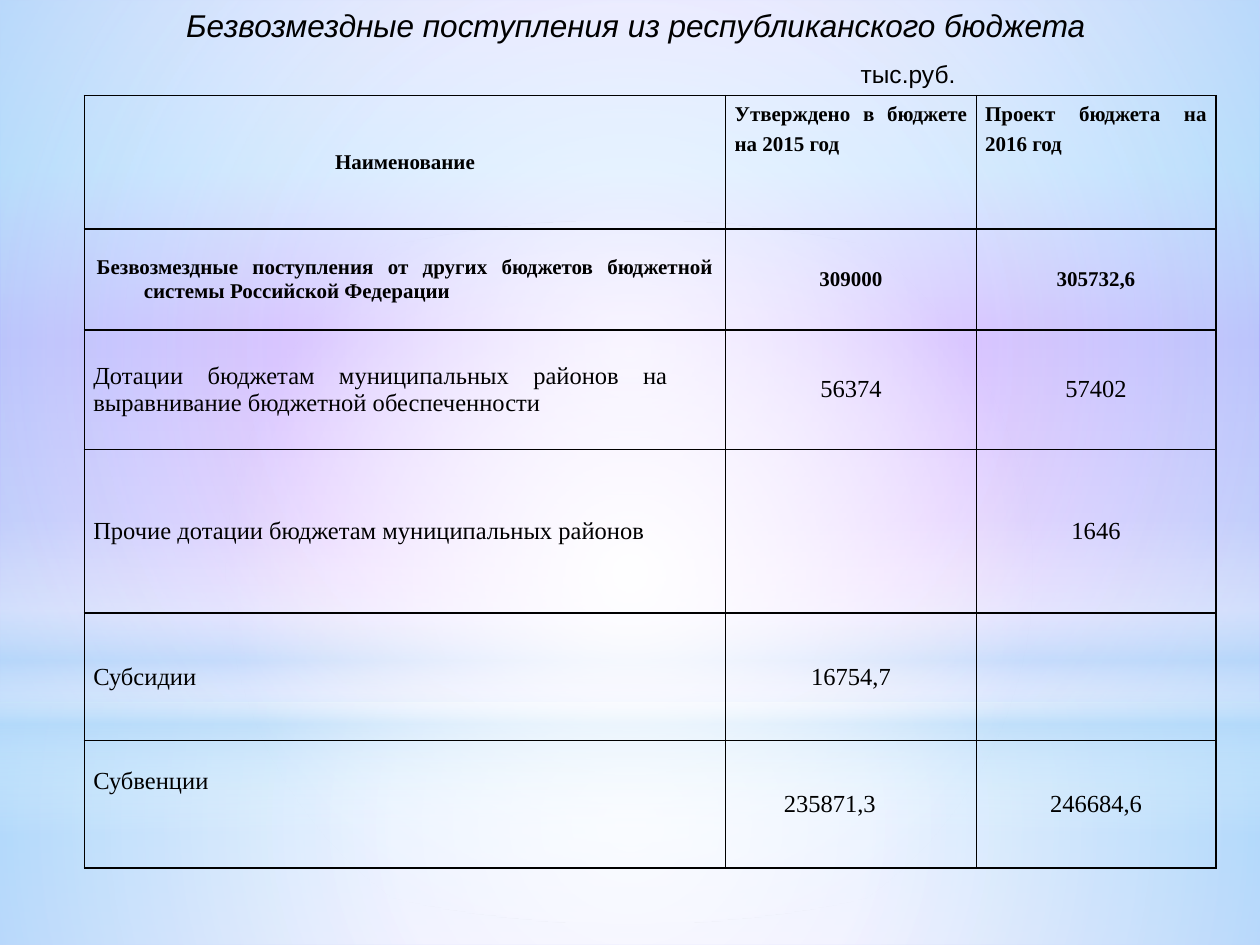
import pptx
import pptx.util
import pptx.dml.color
import pptx.enum.shapes
import pptx.enum.text
import pptx.oxml
import pptx.oxml.ns
from lxml import etree

Cm, Pt = pptx.util.Cm, pptx.util.Pt
RGBColor = pptx.dml.color.RGBColor
ALIGN = pptx.enum.text.PP_ALIGN
ANCHOR = pptx.enum.text.MSO_ANCHOR
SHAPE = pptx.enum.shapes.MSO_SHAPE
qn = pptx.oxml.ns.qn

BLACK = RGBColor(0x00, 0x00, 0x00)
WHITE = RGBColor(0xFF, 0xFF, 0xFF)
PALE_BLUE = RGBColor(0xB4, 0xDC, 0xFA)
LAVENDER = RGBColor(0xCC, 0xCC, 0xFF)
SKY = RGBColor(0x99, 0xCC, 0xFF)
VIOLET = RGBColor(0x99, 0x66, 0xFF)
LILAC = RGBColor(0xCC, 0x99, 0xFF)


def set_gradient(properties, stops, radial):
    """Replace the solid fill with stops of (position %, colour, opacity %)."""
    gradient = etree.Element(qn("a:gradFill"), rotWithShape="1")
    stop_list = etree.SubElement(gradient, qn("a:gsLst"))
    for position, color, opacity in stops:
        stop = etree.SubElement(stop_list, qn("a:gs"), pos=str(position * 1000))
        rgb = etree.SubElement(stop, qn("a:srgbClr"), val=str(color))
        if opacity < 100:
            etree.SubElement(rgb, qn("a:alpha"), val=str(opacity * 1000))
    if radial:
        center = etree.SubElement(gradient, qn("a:path"), path="circle")
        etree.SubElement(center, qn("a:fillToRect"), l="50000", t="50000", r="50000", b="50000")
    else:
        etree.SubElement(gradient, qn("a:lin"), ang="5400000", scaled="0")
    properties.replace(properties.find(qn("a:solidFill")), gradient)


def set_borders(cell):
    """Draw a 1 pt black line on every side of the cell."""
    properties = cell._tc.get_or_add_tcPr()
    for index, side in enumerate(("a:lnL", "a:lnR", "a:lnT", "a:lnB")):
        line = etree.Element(qn(side), w=str(Pt(1)))
        fill = etree.SubElement(line, qn("a:solidFill"))
        etree.SubElement(fill, qn("a:srgbClr"), val=str(BLACK))
        properties.insert(index, line)


presentation = pptx.Presentation()
presentation.slide_width = Cm(25.4)
presentation.slide_height = Cm(19.05)
slide = presentation.slides.add_slide(presentation.slide_layouts[5])

# Background
slide.background.fill.solid()
set_gradient(
    slide.background._cSld.bg.bgPr,
    [(0, LAVENDER, 100), (18, SKY, 100), (36, VIOLET, 100),
     (61, LILAC, 100), (82, SKY, 100), (100, LAVENDER, 100)],
    radial=False,
)

# Translucent glows: shape, top, height, stops, radial
glows = [
    (SHAPE.RECTANGLE, 14.17, 4.88,
     [(0, WHITE, 91), (37, WHITE, 76), (100, PALE_BLUE, 79)], True),
    (SHAPE.RECTANGLE, 0, 14.17,
     [(0, WHITE, 89), (48, WHITE, 62), (100, PALE_BLUE, 79)], True),
    (SHAPE.RECTANGLE, 10.46, 6.35,
     [(0, WHITE, 0), (29, WHITE, 30), (45, PALE_BLUE, 40),
      (55, WHITE, 26), (65, PALE_BLUE, 60), (100, WHITE, 0)], False),
    (SHAPE.OVAL, 4.45, 14.17, [(0, WHITE, 100), (56, WHITE, 0)], True),
]
for kind, top, height, stops, radial in glows:
    glow = slide.shapes.add_shape(kind, 0, Cm(top), presentation.slide_width, Cm(height))
    glow.shadow.inherit = False
    glow.line.fill.background()
    glow.fill.solid()
    set_gradient(glow._element.spPr, stops, radial)

# Budget table
rows = [
    ("Наименование", "Утверждено в бюджете на 2015 год", "Проект бюджета на 2016 год"),
    ("Безвозмездные поступления от других бюджетов бюджетной системы Российской Федерации",
     "309000", "305732,6"),
    ("Дотации бюджетам муниципальных районов на выравнивание бюджетной обеспеченности",
     "56374", "57402"),
    ("Прочие дотации бюджетам муниципальных районов", "", "1646"),
    ("Субсидии", "16754,7", ""),
    ("Субвенции", "235871,3", "246684,6"),
]
column_widths = [12.93, 5.05, 4.83]
row_heights = [2.69, 2.03, 2.41, 3.3, 2.57, 2.57]
budget = slide.shapes.add_table(
    len(rows), len(column_widths), Cm(1.7), Cm(1.93),
    Cm(sum(column_widths)), Cm(sum(row_heights)),
).table
budget.first_row = False
budget.horz_banding = False
for column, width in zip(budget.columns, column_widths):
    column.width = Cm(width)
for row, height in zip(budget.rows, row_heights):
    row.height = Cm(height)

for r, texts in enumerate(rows):
    for c, text in enumerate(texts):
        cell = budget.cell(r, c)
        cell.text = text
        cell.fill.background()
        set_borders(cell)
        year_heading = r == 0 and c > 0
        summary = r < 2 and not year_heading
        cell.vertical_anchor = ANCHOR.TOP if year_heading else ANCHOR.MIDDLE
        cell.margin_left = cell.margin_right = Cm(0.25 if summary else 0.18)
        cell.margin_top = cell.margin_bottom = Cm(0.13 if summary else 0)
        paragraph = cell.text_frame.paragraphs[0]
        justified = year_heading or (c == 0 and r > 0)
        paragraph.alignment = ALIGN.JUSTIFY if justified else ALIGN.CENTER
        paragraph.font.name = "Times New Roman"
        paragraph.font.size = Pt(12 if r < 2 else 14)
        paragraph.font.bold = r < 2
        paragraph.font.color.rgb = BLACK
        if year_heading:
            paragraph.line_spacing = 1.3
        if summary:
            indent = paragraph._p.get_or_add_pPr()
            indent.set("marL", str(Cm(0.95)))
            indent.set("indent", str(-Cm(0.95)))

# Cells placed by their margins
budget.cell(2, 0).margin_right = Cm(1.17)
subvention_name = budget.cell(5, 0)
subvention_name.vertical_anchor = ANCHOR.TOP
subvention_name.margin_top = Cm(0.55)
subvention_2015 = budget.cell(5, 1)
subvention_2015.margin_left = Cm(1.17)
subvention_2015.text_frame.paragraphs[0].alignment = ALIGN.LEFT

# Title, brought in front of the glows
title = slide.shapes.title
slide.shapes._spTree.append(title._element)
title.left, title.top, title.width, title.height = Cm(3.5), Cm(0), Cm(18.9), Cm(1.02)
title.text_frame.text = "Безвозмездные поступления из республиканского бюджета"

# Unit of measure
unit = slide.shapes.add_textbox(Cm(17.1), Cm(0.98), Cm(3), Cm(1.02))
unit.text_frame.text = "тыс.руб."

for caption, size, italic in ((title, 18, True), (unit, 14, False)):
    caption.text_frame.word_wrap = not italic
    caption.text_frame.auto_size = pptx.enum.text.MSO_AUTO_SIZE.NONE
    caption.text_frame.vertical_anchor = ANCHOR.MIDDLE
    paragraph = caption.text_frame.paragraphs[0]
    paragraph.alignment = ALIGN.LEFT
    paragraph.font.name = "Arial"
    paragraph.font.size = Pt(size)
    paragraph.font.italic = italic
    paragraph.font.color.rgb = BLACK

presentation.save("out.pptx")
